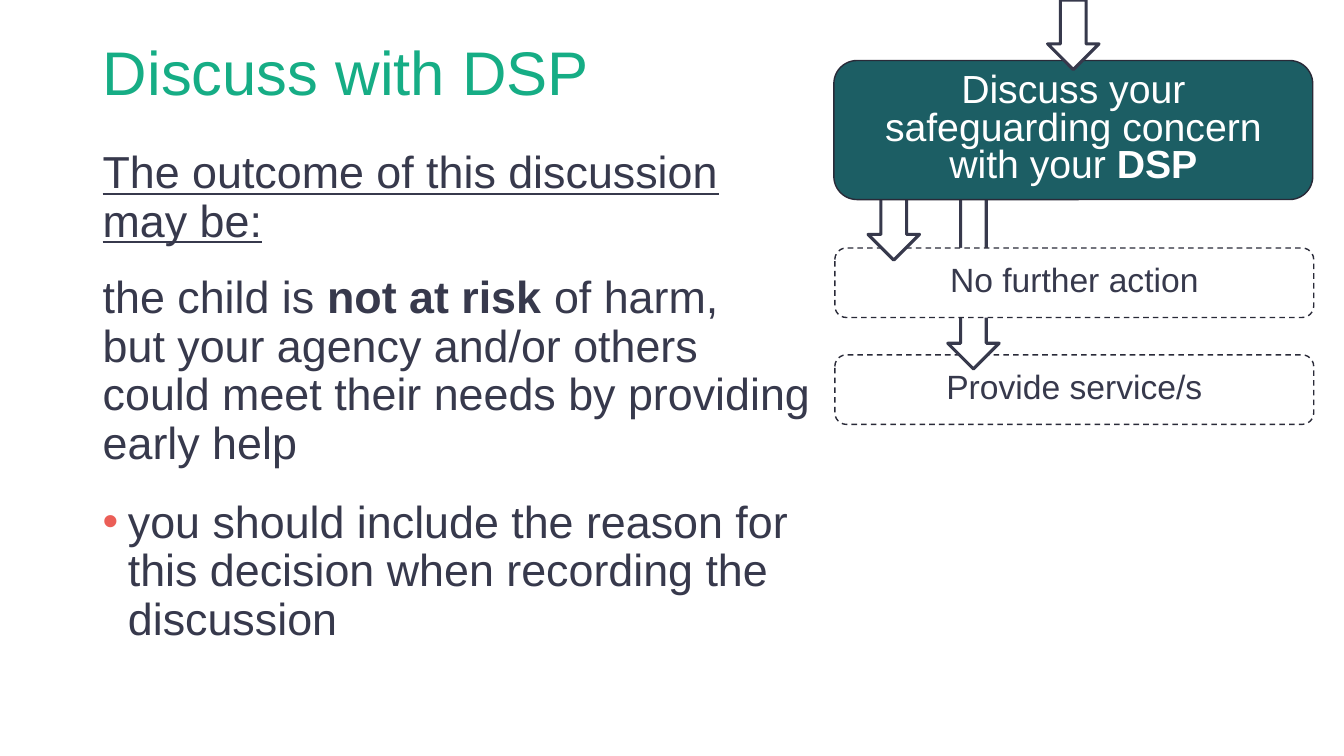
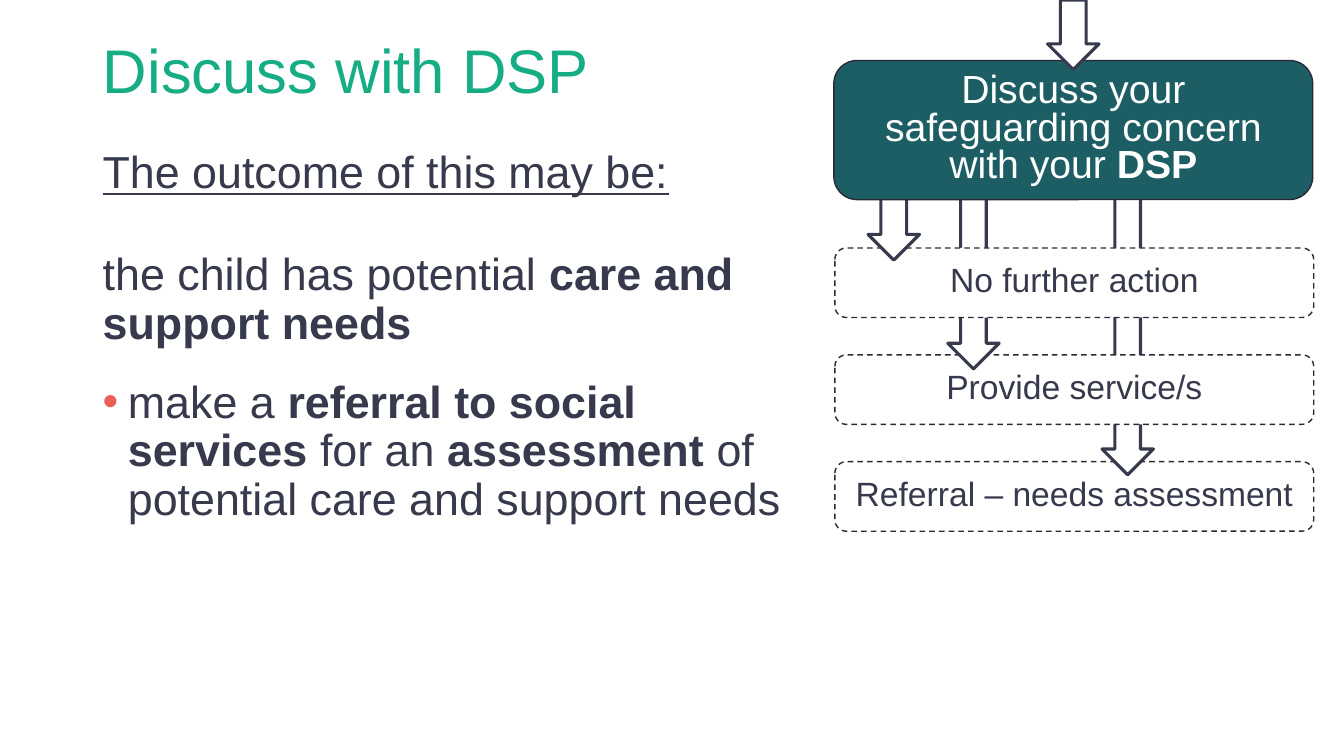
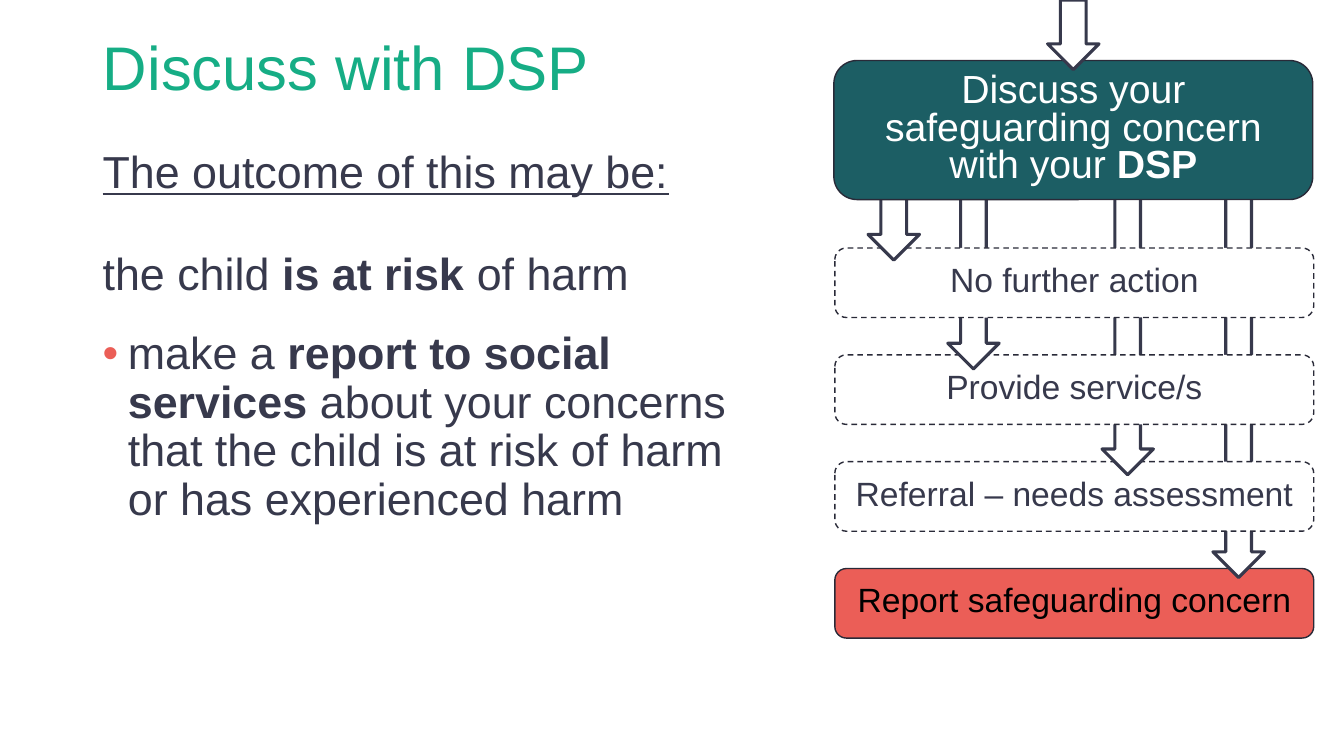
import dataclasses

import lxml.etree
import pptx
import pptx.dml.color
import pptx.enum.dml
import pptx.enum.shapes
import pptx.enum.text
import pptx.oxml.ns
import pptx.util

Inches = pptx.util.Inches
Pt = pptx.util.Pt
SHAPES = pptx.enum.shapes.MSO_SHAPE
ANCHOR = pptx.enum.text.MSO_ANCHOR
ALIGN = pptx.enum.text.PP_ALIGN


@dataclasses.dataclass(frozen=True)
class Theme:
    font: str = "Arial"
    title: str = "16AD85"
    text: str = "37394C"
    outline: str = "292A38"
    header: str = "1C5E64"
    alert: str = "EB5E57"
    white: str = "FFFFFF"
    black: str = "000000"
    title_size: int = 44
    body_size: int = 32
    header_size: int = 28
    step_size: int = 24
    body_spacing: float = 0.9
    box_spacing: float = 0.8


THEME = Theme()

TITLE = "Discuss with DSP"
HEADER = "Discuss your safeguarding concern with your **DSP**"

SLIDES = [
    {
        "title_size": (6.86, 0.69),
        "heading": "The outcome of this discussion may be:",
        "body_at": (0.92, 2.68, 7.32, 4.15),
        "finding": "the child is **not at risk **of harm,\nbut your agency and/or others\n"
                   "could meet their needs by providing early help",
        "action": "you should include the reason for this decision when recording the discussion",
        "steps": 2,
    },
    {
        "title_size": (7.21, 0.65),
        "heading": "The outcome of this may be:",
        "body_at": (0.92, 2.45, 7.32, 4.15),
        "finding": "the child has potential** care and support needs**",
        "action": "make a **referral to social services **for an **assessment** "
                  "of potential care and support needs",
        "steps": 3,
    },
    {
        "title_size": (7.06, 0.61),
        "heading": "The outcome of this may be:",
        "body_at": (0.92, 2.45, 6.86, 4.15),
        "finding": "the child **is at risk **of harm",
        "action": "make a **report to social services **about your concerns "
                  "that the child is at risk of harm or has experienced harm",
        "steps": 4,
    },
]

STEPS = [
    {"label": "No further action", "arrow": (8.61, 1.89, 0.69)},
    {"label": "Provide service/s", "arrow": (9.4, 1.84, 1.82)},
    {"label": "Referral – needs assessment", "arrow": (10.93, 1.53, 3.18)},
    {"label": "Report safeguarding concern", "arrow": (12.03, 1.23, 4.5), "alert": True},
]

LEFT, TITLE_TOP = 0.92, 0.4
HEADING_AT = (LEFT, 1.44, 6.86, 0.56)
HEADER_AT = (8.27, 0.6, 4.75, 1.38)
ENTRY_ARROW = (10.39, 0, 0.69)
STEP_LEFT, STEP_TOP, STEP_PITCH = 8.28, 2.46, 1.06
STEP_WIDTH, STEP_HEIGHT = 4.75, 0.69
ARROW_WIDTH = 0.51


def color(value):
    return pptx.dml.color.RGBColor.from_string(value)


def write(paragraph, text, size, text_color, spacing, align=ALIGN.LEFT):
    for index, piece in enumerate(text.split("**")):
        for number, line in enumerate(piece.split("\n")):
            if number:
                paragraph.add_line_break()
            if line:
                run = paragraph.add_run()
                run.text = line
                if index % 2:
                    run.font.bold = True
    paragraph.alignment = align
    paragraph.line_spacing = spacing
    paragraph.font.name = THEME.font
    paragraph.font.size = Pt(size)
    paragraph.font.color.rgb = color(text_color)


def add_bullet(paragraph):
    properties = paragraph._p.get_or_add_pPr()
    properties.set("marL", str(Inches(0.25)))
    properties.set("indent", str(-Inches(0.25)))
    qn = pptx.oxml.ns.qn
    bullet_color = lxml.etree.SubElement(properties, qn("a:buClr"))
    lxml.etree.SubElement(bullet_color, qn("a:srgbClr"), val=THEME.alert)
    lxml.etree.SubElement(properties, qn("a:buFont"), typeface=THEME.font)
    lxml.etree.SubElement(properties, qn("a:buChar"), char="•")


def add_title(slide, size):
    title = slide.shapes.title
    title.left, title.top = Inches(LEFT), Inches(TITLE_TOP)
    title.width, title.height = map(Inches, size)
    frame = title.text_frame
    frame.auto_size = pptx.enum.text.MSO_AUTO_SIZE.NONE
    frame.vertical_anchor = ANCHOR.MIDDLE
    write(frame.paragraphs[0], TITLE, THEME.title_size, THEME.title, THEME.body_spacing)


def add_text(slide, at):
    frame = slide.shapes.add_textbox(*map(Inches, at)).text_frame
    frame.word_wrap = True
    return frame


def add_heading(slide, text):
    paragraph = add_text(slide, HEADING_AT).paragraphs[0]
    write(paragraph, text, THEME.body_size, THEME.text, THEME.body_spacing)
    paragraph.font.underline = True


def add_body(slide, at, finding, action):
    frame = add_text(slide, at)
    finding_paragraph, action_paragraph = frame.paragraphs[0], frame.add_paragraph()
    add_bullet(action_paragraph)
    action_paragraph.space_before = Pt(10)
    for paragraph, text in ((finding_paragraph, finding), (action_paragraph, action)):
        write(paragraph, text, THEME.body_size, THEME.text, THEME.body_spacing)
        paragraph.space_after = Pt(12)


def add_shape(slide, kind, at, fill, line, width):
    shape = slide.shapes.add_shape(kind, *map(Inches, at))
    shape.shadow.inherit = False
    shape.fill.solid()
    shape.fill.fore_color.rgb = color(fill)
    shape.line.color.rgb = color(line)
    shape.line.width = Pt(width)
    return shape


def add_box(slide, at, text, size, fill, text_color, dashed=False):
    box = add_shape(slide, SHAPES.ROUNDED_RECTANGLE, at, fill, THEME.outline, 1)
    if dashed:
        box.line.dash_style = pptx.enum.dml.MSO_LINE.DASH
    frame = box.text_frame
    frame.word_wrap = True
    frame.vertical_anchor = ANCHOR.MIDDLE
    write(frame.paragraphs[0], text, size, text_color, THEME.box_spacing, ALIGN.CENTER)


def add_arrow(slide, left, top, height):
    at = (left, top, ARROW_WIDTH, height)
    add_shape(slide, SHAPES.DOWN_ARROW, at, THEME.white, THEME.text, 2.25)


def add_flow(slide, count):
    for index in reversed(range(count)):
        step = STEPS[index]
        alert = step.get("alert", False)
        at = (STEP_LEFT, STEP_TOP + index * STEP_PITCH, STEP_WIDTH, STEP_HEIGHT)
        add_box(slide, at, step["label"], THEME.step_size,
                THEME.alert if alert else THEME.white,
                THEME.black if alert else THEME.text, dashed=not alert)
        add_arrow(slide, *step["arrow"])
    add_box(slide, HEADER_AT, HEADER, THEME.header_size, THEME.header, THEME.white)
    add_arrow(slide, *ENTRY_ARROW)


def main():
    presentation = pptx.Presentation()
    presentation.slide_width = Inches(13.33)
    presentation.slide_height = Inches(7.5)
    title_only = presentation.slide_layouts[5]
    for content in SLIDES:
        slide = presentation.slides.add_slide(title_only)
        add_title(slide, content["title_size"])
        add_body(slide, content["body_at"], content["finding"], content["action"])
        add_flow(slide, content["steps"])
        add_heading(slide, content["heading"])
    presentation.save("out.pptx")


if __name__ == "__main__":
    main()
